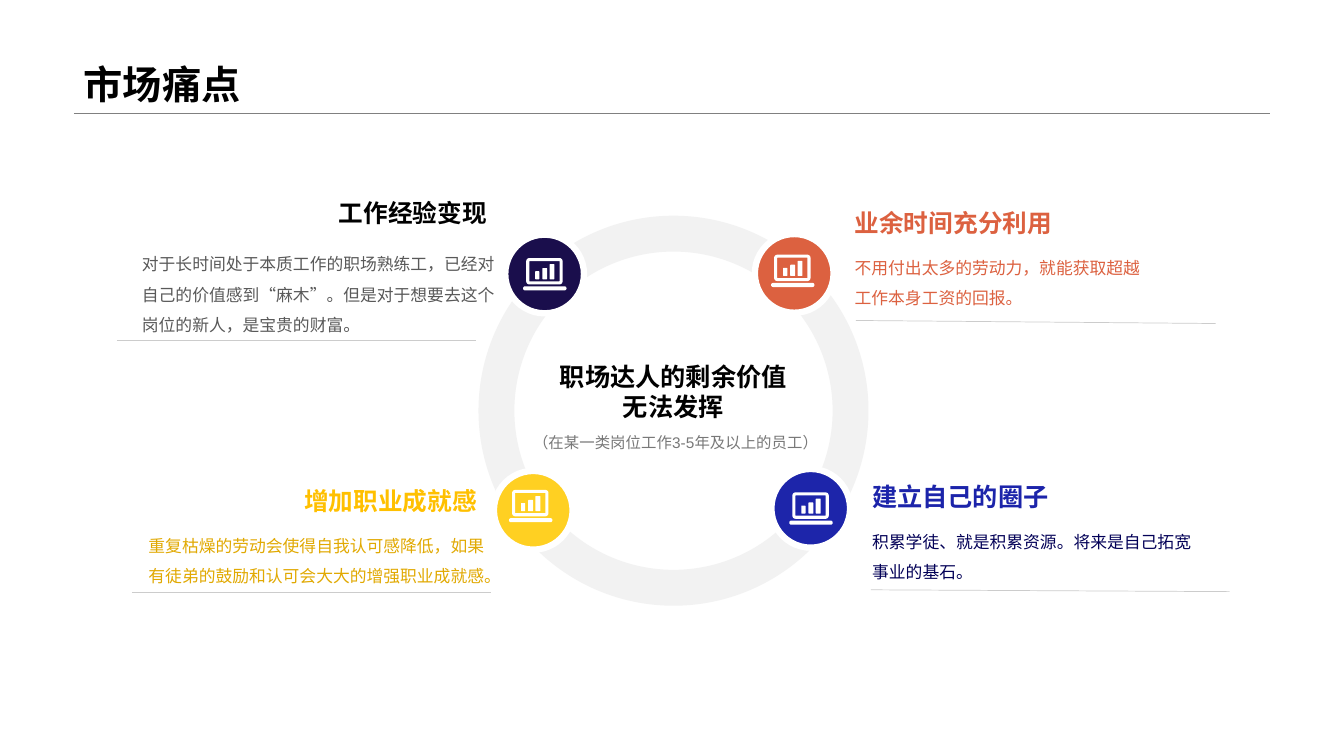
import math
from dataclasses import dataclass

from lxml import etree
from pptx import Presentation
from pptx.dml.color import RGBColor
from pptx.enum import shapes, text
from pptx.oxml import ns
from pptx.util import Pt

FONT = "Arial"
BLACK = RGBColor(0x00, 0x00, 0x00)
WHITE = RGBColor(0xFF, 0xFF, 0xFF)
RING_GRAY = RGBColor(0xF2, 0xF2, 0xF2)
RULE_GRAY = RGBColor(0xCC, 0xCC, 0xCC)
TITLE_RULE_GRAY = RGBColor(0x80, 0x80, 0x80)
NOTE_GRAY = RGBColor(0x78, 0x78, 0x78)
BODY_GRAY = RGBColor(0x59, 0x59, 0x59)
NAVY = RGBColor(0x1A, 0x0E, 0x4C)
ORANGE = RGBColor(0xDC, 0x61, 0x40)
YELLOW = RGBColor(0xFF, 0xD0, 0x22)
AMBER = RGBColor(0xFF, 0xC0, 0x00)
GOLD = RGBColor(0xE1, 0xA9, 0x02)
BLUE = RGBColor(0x1D, 0x25, 0xAA)
HEADING_BLUE = RGBColor(0x1C, 0x24, 0xAA)
DARK_BLUE = RGBColor(0x03, 0x01, 0x57)

BADGE_SIZE = 56.2
HEADING_HEIGHT = 28.1
BODY_HEIGHT = 75
# Laptop outlines: left, top, right, bottom, corner radius
BAR_BOTTOM = 15.2
LAPTOP_PARTS = [
    (0, 20.2, 31, 23.1, 1.4),
    (8.6, 9.4, 11.6, BAR_BOTTOM, 0.5),
    (13.7, 7.2, 17.2, BAR_BOTTOM, 0.5),
    (18.9, 4.4, 22.4, BAR_BOTTOM, 0.5),
    (4.4, 2.2, 26, 16.7, 0.2),
    (2.2, 0, 28.2, 18.9, 2.3),
]


@dataclass
class PainPoint:
    heading: str
    body: str
    badge: tuple
    laptop: tuple
    heading_box: tuple  # left, top, width
    body_box: tuple  # left, top, width
    rule: tuple
    badge_color: RGBColor
    heading_color: RGBColor
    body_color: RGBColor
    heading_size: float = 17.6
    body_align: text.PP_ALIGN = text.PP_ALIGN.LEFT


PAIN_POINTS = [
    PainPoint("工作经验变现",
              "对于长时间处于本质工作的职场熟练工，已经对自己的价值感到“麻木”。但是对于想要去这个岗位的新人，是宝贵的财富。",
              (360.9, 167.6), (373.7, 184.3), (235, 138.2, 140), (94.3, 170.8, 272.9),
              (83.5, 243.4, 339.8, 243.4), NAVY, BLACK, BODY_GRAY),
    PainPoint("业余时间充分利用",
              "不用付出太多的劳动力，就能获取超越工作本身工资的回报。",
              (539.2, 167.2), (550.8, 181.9), (603.4, 145.1, 211), (603.4, 173.5, 220.3),
              (611.3, 228.9, 868.3, 231.1), ORANGE, ORANGE, ORANGE),
    PainPoint("增加职业成就感",
              "重复枯燥的劳动会使得自我认可感降低，如果有徒弟的鼓励和认可会大大的增强职业成就感。",
              (352.8, 336.4), (363.6, 349.9), (210.2, 343.4, 211), (94.3, 371.8, 263.5),
              (94.3, 422.9, 350.6, 422.9), YELLOW, AMBER, GOLD,
              body_align=text.PP_ALIGN.CENTER),
    PainPoint("建立自己的圈子",
              "积累学徒、就是积累资源。将来是自己拓宽事业的基石。",
              (551, 335), (563.8, 351.7), (615.9, 340.9, 211), (615.9, 369.2, 246.2),
              (622.1, 421.3, 878.4, 422.6), BLUE, HEADING_BLUE, DARK_BLUE,
              heading_size=18),
]


def add_text(page, words, left, top, width, height, size, color, bold=False,
             align=text.PP_ALIGN.LEFT, anchor=text.MSO_ANCHOR.TOP, spacing=None):
    box = page.shapes.add_textbox(Pt(left), Pt(top), Pt(width), Pt(height))
    frame = box.text_frame
    frame.word_wrap = True
    frame.vertical_anchor = anchor
    frame.text = words
    para = frame.paragraphs[0]
    para.alignment = align
    if spacing:
        para.line_spacing = spacing
    span = para.runs[0]
    span.font.name = FONT
    span.font.size = Pt(size)
    span.font.bold = bold
    span.font.color.rgb = color


def add_rule(page, x1, y1, x2, y2, color, weight):
    rule = page.shapes.add_connector(
        shapes.MSO_CONNECTOR.STRAIGHT, Pt(x1), Pt(y1), Pt(x2), Pt(y2))
    rule.line.color.rgb = color
    rule.line.width = Pt(weight)
    etree.SubElement(rule.element.spPr, ns.qn("a:effectLst"))


def paint(shape, color):
    shape.shadow.inherit = False
    shape.fill.solid()
    shape.fill.fore_color.rgb = color
    shape.line.fill.background()


def add_round(page, kind, left, top, size, color):
    shape = page.shapes.add_shape(kind, Pt(left), Pt(top), Pt(size), Pt(size))
    paint(shape, color)
    return shape


def rounded_outline(left, top, right, bottom, radius):
    """Return the points of a rectangle with rounded corners, clockwise."""
    centers = [(right - radius, bottom - radius), (left + radius, bottom - radius),
               (left + radius, top + radius), (right - radius, top + radius)]
    points = []
    for corner, (x, y) in enumerate(centers):
        for step in range(5):
            angle = math.pi / 2 * (corner + step / 4)
            points.append((x + radius * math.cos(angle), y + radius * math.sin(angle)))
    return points


def add_laptop(page, left, top):
    outlines = [[(Pt(left + x), Pt(top + y)) for x, y in rounded_outline(*part)]
                for part in LAPTOP_PARTS]
    builder = page.shapes.build_freeform(*outlines[0][0])
    for outline in outlines:
        builder.move_to(*outline[0])
        builder.add_line_segments(outline[1:], close=True)
    paint(builder.convert_to_shape(), WHITE)


def add_pain_point(page, point):
    badge = add_round(page, shapes.MSO_SHAPE.OVAL, *point.badge, BADGE_SIZE,
                      point.badge_color)
    badge.line.color.rgb = WHITE
    badge.line.width = Pt(4.5)
    add_laptop(page, *point.laptop)
    add_text(page, point.heading, *point.heading_box, HEADING_HEIGHT,
             point.heading_size, point.heading_color, bold=True,
             anchor=text.MSO_ANCHOR.BOTTOM)
    add_text(page, point.body, *point.body_box, BODY_HEIGHT, 12, point.body_color,
             align=point.body_align, spacing=1.5)
    add_rule(page, *point.rule, RULE_GRAY, 0.5)


def main():
    deck = Presentation()
    deck.slide_width, deck.slide_height = Pt(960), Pt(540)
    page = deck.slides.add_slide(deck.slide_layouts[6])

    add_rule(page, 52.8, 81, 907.2, 81, TITLE_RULE_GRAY, 0.25)
    add_text(page, "市场痛点", 52.8, 0, 854.4, 81, 28, BLACK, bold=True,
             anchor=text.MSO_ANCHOR.BOTTOM, spacing=0.9)

    ring = add_round(page, shapes.MSO_SHAPE.DONUT, 341.8, 154.1, 278.6, RING_GRAY)
    ring.adjustments[0] = 0.092
    for point in PAIN_POINTS:
        add_pain_point(page, point)

    add_text(page, "职场达人的剩余价值无法发挥", 389.5, 254.2, 182.9, 51, 18, BLACK,
             bold=True, align=text.PP_ALIGN.CENTER)
    add_text(page, "（在某一类岗位工作3-5年及以上的员工）", 373.7, 306, 219.6, 21, 11,
             NOTE_GRAY)
    deck.save("out.pptx")


if __name__ == "__main__":
    main()
